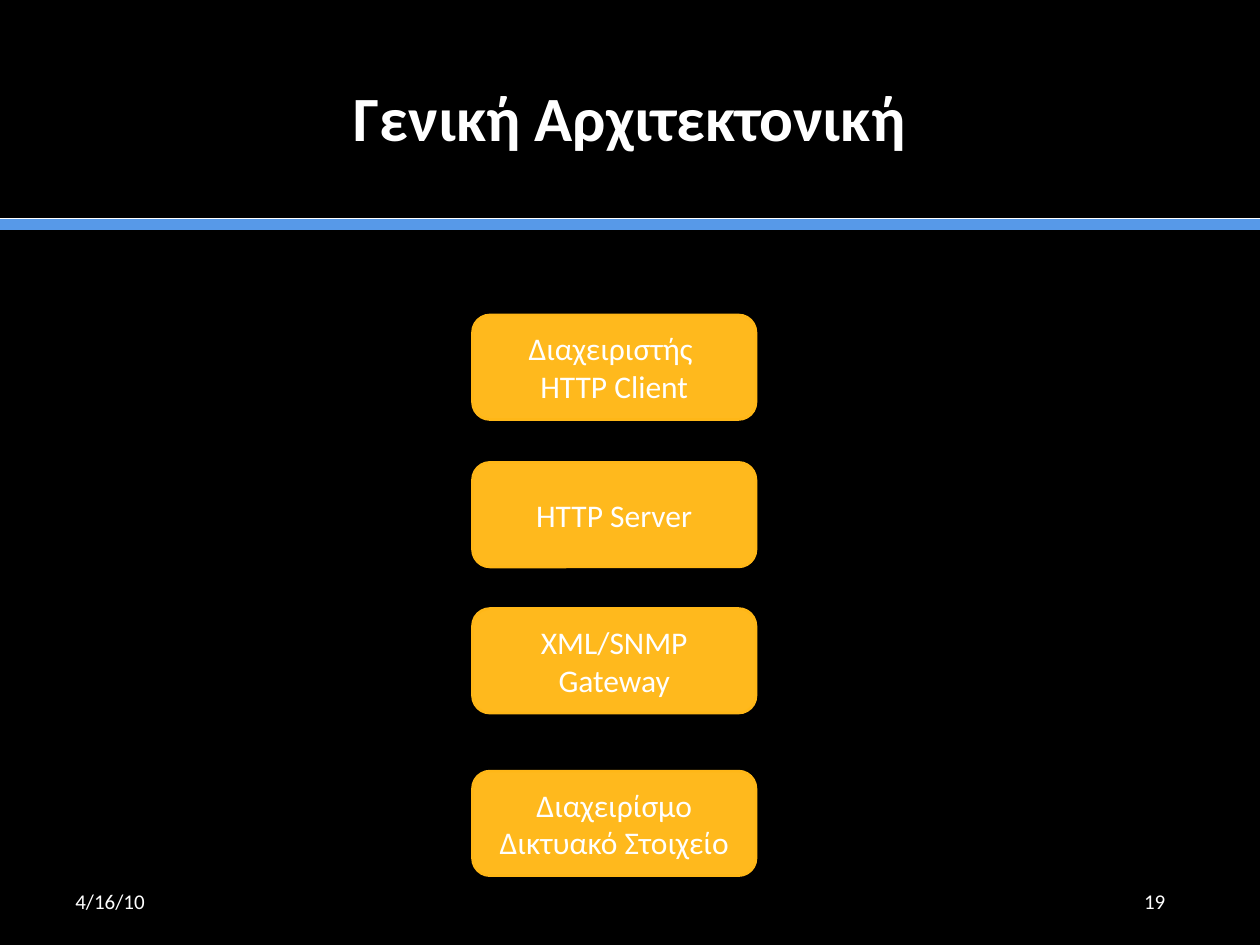
from lxml import etree
from pptx import Presentation
from pptx.dml.color import RGBColor
from pptx.enum.shapes import MSO_CONNECTOR, MSO_SHAPE
from pptx.enum.text import MSO_ANCHOR, PP_ALIGN
from pptx.oxml.ns import qn
from pptx.util import Inches, Pt

STRAIGHT = MSO_CONNECTOR.STRAIGHT
ROUNDED = MSO_SHAPE.ROUNDED_RECTANGLE
MIDDLE = MSO_ANCHOR.MIDDLE
LEFT, CENTER = PP_ALIGN.LEFT, PP_ALIGN.CENTER

FONT = "Calibri"
BLACK, WHITE, BLUE = "000000", "FFFFFF", "5799E8"
AMBER, AMBER_EDGE = "FFB91D", "FFB717"
WIDTH, HEIGHT = 10, 7.5

COMPONENTS = [
    (2.5, "Διαχειριστής \nHTTP Client"),
    (3.67, "HTTP Server"),
    (4.83, "XML/SNMP Gateway"),
    (6.12, "Διαχειρίσμο Δικτυακό Στοιχείο"),
]


def paint(color_format, color):
    color_format.rgb = RGBColor.from_string(color)


def fill_solid(fill, color):
    fill.solid()
    paint(fill.fore_color, color)


def write_text(frame, text, size=18, bold=False, align=CENTER, color=WHITE):
    frame.word_wrap = True
    frame.vertical_anchor = MIDDLE
    frame.text = text
    for paragraph in frame.paragraphs:
        paragraph.alignment = align
        for run in paragraph.runs:
            run.font.name = FONT
            run.font.size = Pt(size)
            run.font.bold = bold
            paint(run.font.color, color)


def add_label(slide, text, left, top, width, height, **text_format):
    label = slide.shapes.add_textbox(
        Inches(left), Inches(top), Inches(width), Inches(height))
    write_text(label.text_frame, text, **text_format)


def add_rule(slide, y, color, weight):
    rule = slide.shapes.add_connector(
        STRAIGHT, Inches(0), Inches(y), Inches(WIDTH), Inches(y))
    paint(rule.line.color, color)
    rule.line.width = Pt(weight)
    etree.SubElement(rule.line._get_or_add_ln().getparent(), qn("a:effectLst"))


def add_component(slide, top, text):
    component = slide.shapes.add_shape(
        ROUNDED, Inches(3.75), Inches(top), Inches(2.25), Inches(0.83))
    component.shadow.inherit = False
    fill_solid(component.fill, AMBER)
    paint(component.line.color, AMBER_EDGE)
    component.line.width = Pt(1.5)
    write_text(component.text_frame, text)


def main():
    deck = Presentation()
    deck.slide_width, deck.slide_height = Inches(WIDTH), Inches(HEIGHT)
    slide = deck.slides.add_slide(deck.slide_layouts[6])
    fill_solid(slide.background.fill, BLACK)

    add_rule(slide, 1.78, BLUE, 7)
    add_rule(slide, 1.73, WHITE, 0.5)
    add_label(slide, "Γενική Αρχιτεκτονική", 0.5, 0.3, 9, 1.25, size=36, bold=True)
    add_label(slide, "4/16/10", 0.5, 6.95, 2.33, 0.4, size=12, align=LEFT)
    add_label(slide, "19", 8.83, 6.95, 0.67, 0.4, size=12)
    for top, text in COMPONENTS:
        add_component(slide, top, text)

    deck.save("out.pptx")


if __name__ == "__main__":
    main()
